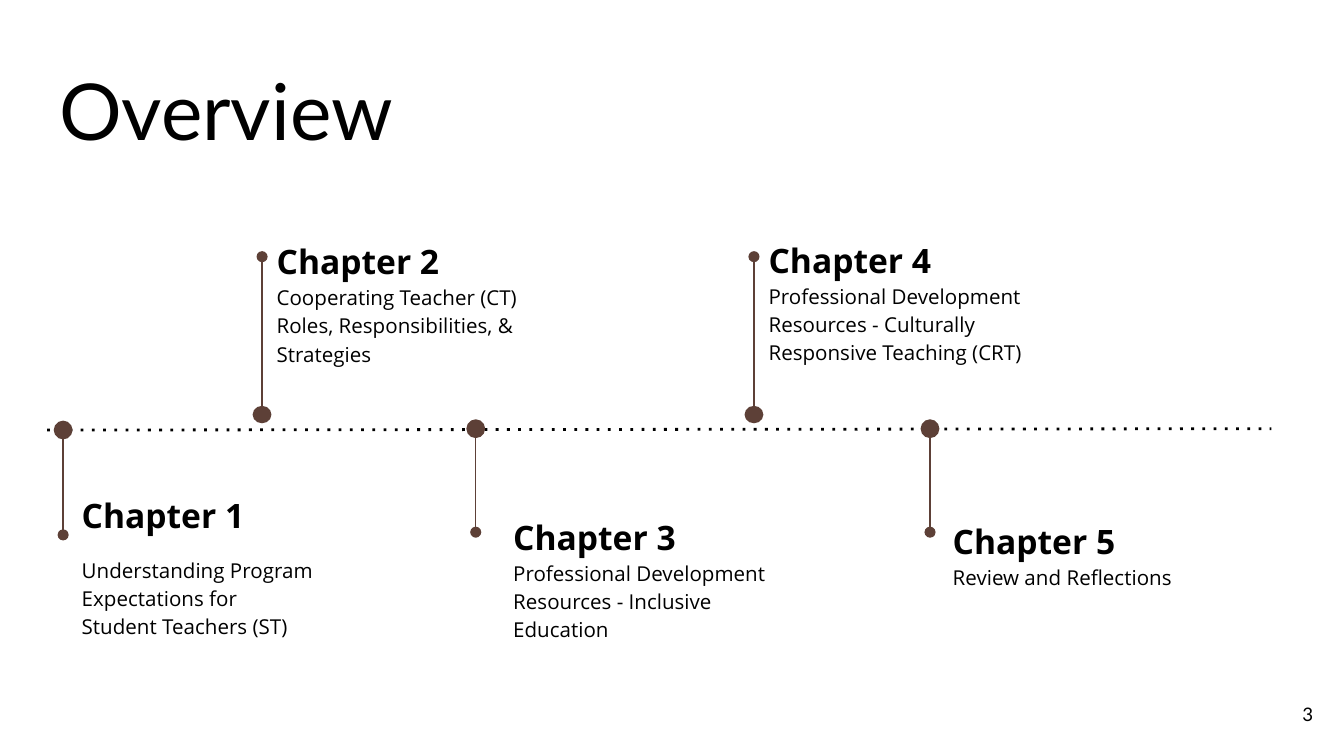
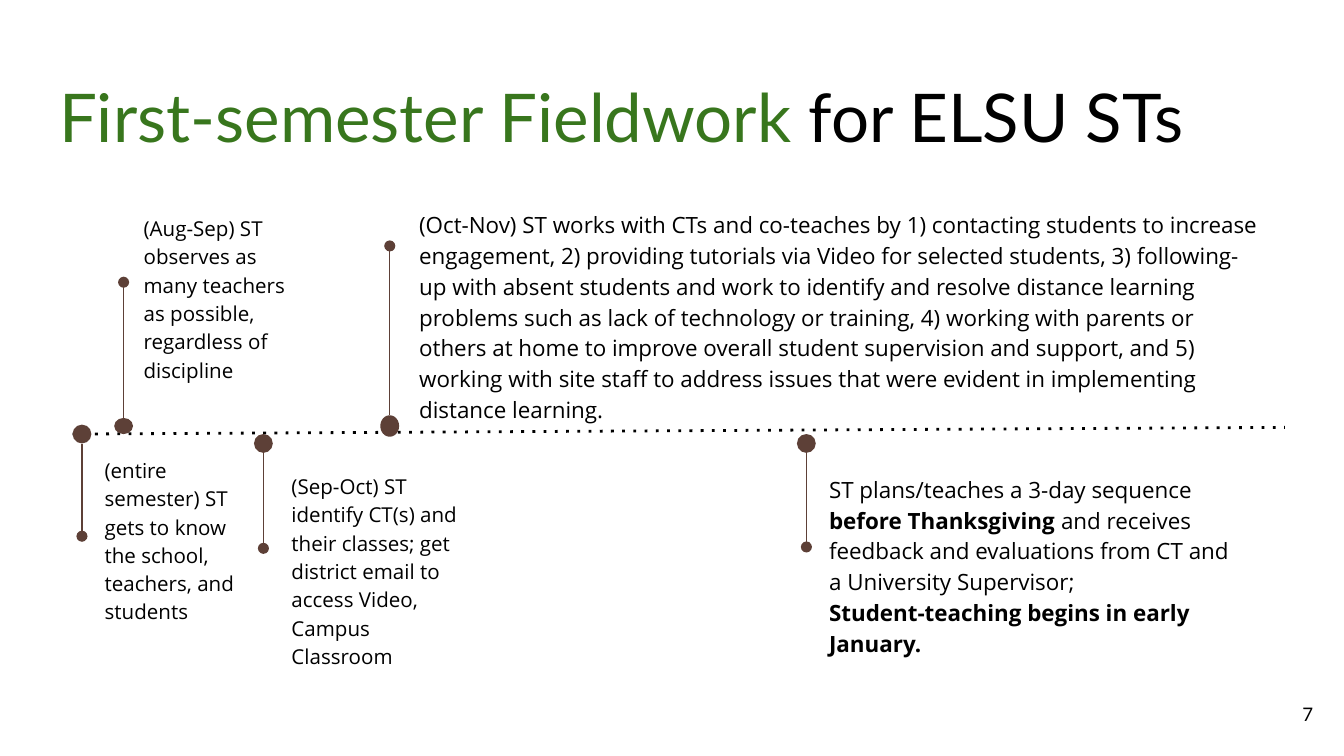
from lxml.etree import SubElement
from pptx import Presentation
from pptx.dml.color import RGBColor
from pptx.enum.shapes import MSO_CONNECTOR, MSO_SHAPE
from pptx.enum.text import MSO_ANCHOR, MSO_AUTO_SIZE, PP_ALIGN
from pptx.oxml.ns import qn
from pptx.util import Inches, Pt

BLACK = "000000"
BROWN = "5D4037"
GREEN = "38761D"
TITLE_FONT = "Lato"
BODY_FONT = "Open Sans"
DOT_WIDTH = 0.14
TITLE_ONLY = 5


def color(value):
    return RGBColor.from_string(value)


class TimelineDeck:
    def __init__(self):
        self.presentation = Presentation()
        self.presentation.slide_width = Inches(10)
        self.presentation.slide_height = Inches(10 * 9 / 16)
        self.slide = None

    def add_slide(self, title_runs, size, number):
        """Start a slide with its title, given as (text, colour) runs, and page number."""
        layout = self.presentation.slide_layouts[TITLE_ONLY]
        self.slide = self.presentation.slides.add_slide(layout)
        title = self.slide.shapes.title
        title.left, title.top = Inches(0.34), Inches(0.35)
        title.width, title.height = Inches(9.32), Inches(0.91)
        self.format_frame(title.text_frame, MSO_ANCHOR.BOTTOM)
        paragraph = title.text_frame.paragraphs[0]
        paragraph.alignment = PP_ALIGN.LEFT
        for text, value in title_runs:
            self.add_run(paragraph, text, size, TITLE_FONT, value)
        self.add_page_number(number)

    def format_frame(self, frame, anchor):
        frame.word_wrap = True
        frame.auto_size = MSO_AUTO_SIZE.NONE
        frame.vertical_anchor = anchor
        frame.margin_left = frame.margin_right = Inches(0.1)
        frame.margin_top = frame.margin_bottom = Inches(0.1)

    def add_run(self, paragraph, text, size, font=BODY_FONT, value=BLACK, bold=False):
        run = paragraph.add_run()
        run.text = text
        run.font.size = Pt(size)
        run.font.name = font
        run.font.bold = bold
        run.font.color.rgb = color(value)

    def add_text_box(self, box, anchor=MSO_ANCHOR.TOP):
        shape = self.slide.shapes.add_textbox(*map(Inches, box))
        self.format_frame(shape.text_frame, anchor)
        return shape.text_frame

    def add_page_number(self, number):
        frame = self.add_text_box((9.27, 5.1, 0.6, 0.43), MSO_ANCHOR.MIDDLE)
        paragraph = frame.paragraphs[0]
        paragraph.alignment = PP_ALIGN.RIGHT
        self.add_run(paragraph, str(number), 10, TITLE_FONT)

    def add_body(self, box, paragraphs, space_before=0):
        """Add paragraphs, each a list of (text, size, bold) runs."""
        frame = self.add_text_box(box)
        for index, runs in enumerate(paragraphs):
            paragraph = frame.add_paragraph() if index else frame.paragraphs[0]
            paragraph.line_spacing = 1.15
            paragraph.space_before = Pt(space_before)
            for text, size, bold in runs:
                self.add_run(paragraph, text, size, bold=bold)

    def add_line(self, shapes, start, end, value, width, detail, **attributes):
        """Add a line whose dash or arrowhead is the XML element named by detail."""
        line = shapes.add_connector(MSO_CONNECTOR.STRAIGHT, *map(Inches, (*start, *end)))
        line.line.color.rgb = color(value)
        line.line.width = Pt(width)
        properties = line._element.spPr
        SubElement(properties.find(qn("a:ln")), qn(detail), **attributes)
        SubElement(properties, qn("a:effectLst"))

    def add_axis(self, start, end):
        self.add_line(self.slide.shapes, start, end, BLACK, 1.5, "a:prstDash", val="dot")

    def add_marker(self, left, top, height, tip):
        """Add a dot on the axis with a stem that ends in a small oval at tip."""
        shapes = self.slide.shapes.add_group_shape().shapes
        dot = shapes.add_shape(
            MSO_SHAPE.OVAL, *map(Inches, (left, top, DOT_WIDTH, height)))
        dot.shadow.inherit = False
        dot.fill.solid()
        dot.fill.fore_color.rgb = color(BROWN)
        dot.line.fill.background()
        center = left + DOT_WIDTH / 2
        stem_start = top + height if tip > top else top
        self.add_line(shapes, (center, stem_start), (center, tip), BROWN, 0.75,
                      "a:tailEnd", type="oval")


def build_overview(deck):
    deck.add_slide([("Overview", BLACK)], 42, 3)
    deck.add_axis((0.35, 3.2), (9.46, 3.19))
    # marker (left, top, height, tip), text box, description, space before
    chapters = [
        ((0.4, 3.13, 0.14, 3.98), (0.51, 3.54, 1.93, 1.7),
         "Understanding Program Expectations for Student Teachers (ST)", 10),
        ((1.88, 3.02, 0.13, 1.91), (1.96, 1.65, 2.38, 1.2),
         "Cooperating Teacher (CT) Roles, Responsibilities, & Strategies", 0),
        ((3.47, 3.12, 0.14, 3.96), (3.72, 3.7, 2.38, 1.32),
         "Professional Development Resources - Inclusive Education", 0),
        ((5.54, 3.02, 0.13, 1.91), (5.62, 1.64, 2.38, 1.2),
         "Professional Development Resources - Culturally Responsive Teaching (CRT)", 0),
        ((6.85, 3.12, 0.14, 3.96), (6.99, 3.73, 2.38, 1.32),
         "Review and Reflections", 0),
    ]
    for number, (marker, box, description, space_before) in enumerate(chapters, 1):
        deck.add_marker(*marker)
        heading = [(f"Chapter {number}", 18, True)]
        deck.add_body(box, [heading, [(description, 11, False)]], space_before)


def build_fieldwork(deck):
    deck.add_slide(
        [("First-semester Fieldwork", GREEN), (" for ELSU STs", BLACK)], 36, 7)
    deck.add_axis((0.54, 3.23), (9.56, 3.18))
    # marker (left, top, height, tip), text box, paragraphs of runs
    stages = [
        ((0.54, 3.16, 0.14, 3.99), (0.68, 3.28, 1.17, 1.68),
         [[("(entire semester) ST gets to know the school, teachers, and students",
            11, False)]]),
        ((0.85, 3.11, 0.12, 2.1), (0.97, 1.48, 1.32, 1.58),
         [[("(Aug-Sep) ST observes as many teachers as possible, regardless of "
            "discipline", 11, False)]]),
        ((1.89, 3.23, 0.14, 4.08), (2.07, 3.4, 1.48, 1.77),
         [[("(Sep-Oct) ST identify CT(s) and their classes; get district email to "
            "access Video, Campus Classroom", 11, False)]]),
        ((2.83, 3.09, 0.16, 1.83), (3.02, 1.44, 6.48, 1.77),
         [[("(Oct-Nov) ST works with CTs and co-teaches by 1) contacting students to "
            "increase engagement, 2) providing tutorials via Video for selected "
            "students, 3) following-up with absent students and work to identify and "
            "resolve distance learning problems such as lack of technology or "
            "training, 4) working with parents or others at home to improve overall "
            "student supervision and support, and 5) working with site staff to "
            "address issues that were evident in implementing distance learning.",
            12, False)]]),
        ((5.93, 3.23, 0.14, 4.07), (6.07, 3.41, 3.28, 1.31),
         [[("ST plans/teaches a 3-day sequence ", 12, False),
           ("before Thanksgiving ", 12, True),
           ("and receives feedback and evaluations from CT and a University "
            "Supervisor;", 12, False)],
          [("Student-teaching begins in early January.", 12, True)]]),
    ]
    for marker, box, paragraphs in stages:
        deck.add_marker(*marker)
        deck.add_body(box, paragraphs)


def main():
    deck = TimelineDeck()
    build_overview(deck)
    build_fieldwork(deck)
    deck.presentation.save("out.pptx")


if __name__ == "__main__":
    main()
